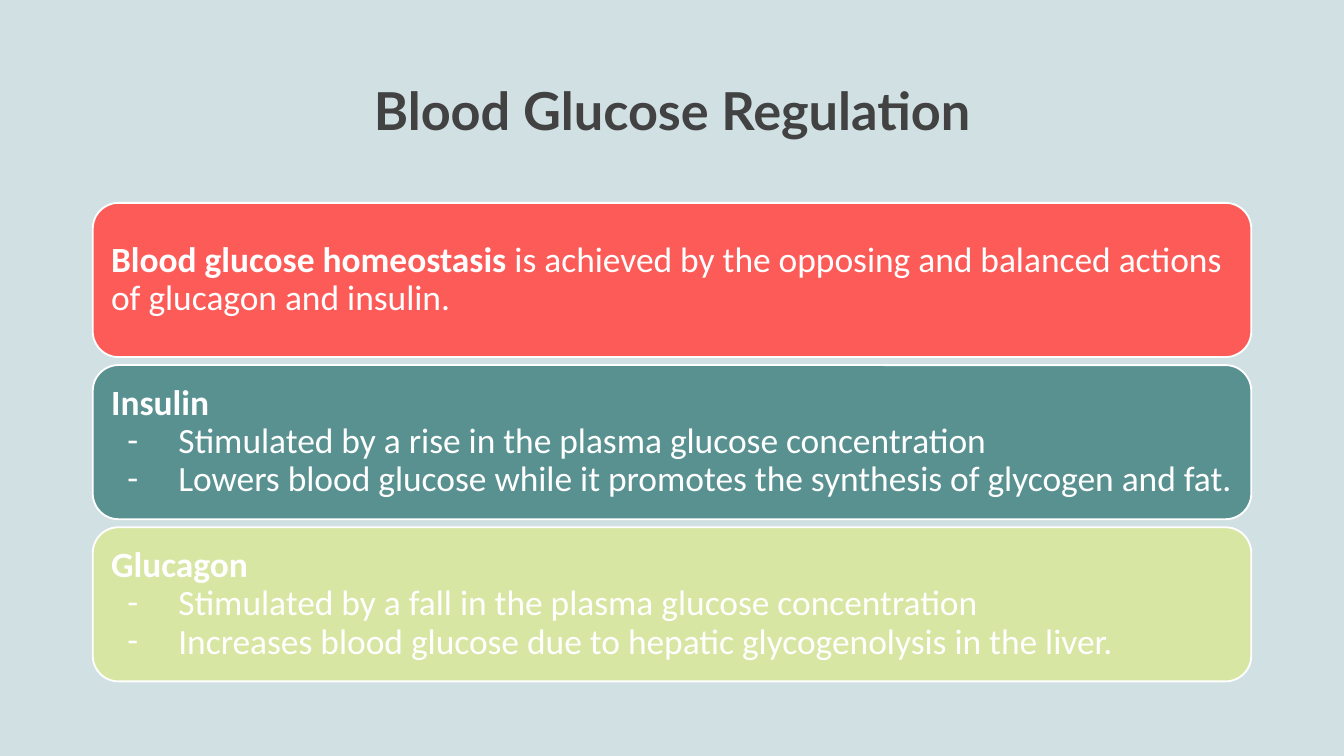
from pptx import Presentation
from pptx.dml.color import RGBColor
from pptx.enum.shapes import MSO_SHAPE as Shape
from pptx.enum.text import MSO_ANCHOR as Anchor, PP_ALIGN as Align
from pptx.oxml.ns import qn
from pptx.util import Inches, Pt
from lxml.etree import SubElement

WHITE = "FFFFFF"
CARDS = [
    ("FD5B58", "Blood glucose homeostasis ",
     "is achieved by the opposing and balanced actions of glucagon and insulin.", []),
    ("599191", "Insulin", "",
     ["Stimulated by a rise in the plasma glucose concentration",
      "Lowers blood glucose while it promotes the synthesis of glycogen and fat. "]),
    ("D7E6A3", "Glucagon", "",
     ["Stimulated by a fall in the plasma glucose concentration",
      "Increases blood glucose due to hepatic glycogenolysis in the liver. "]),
]


def color(code):
    """Turn a hex string into a colour."""
    return RGBColor.from_string(code)


def add_text(slide, x, y, w, h, side, top):
    """Place a wrapping, vertically centred text box and return its frame."""
    box = slide.shapes.add_textbox(Inches(x), Inches(y), Inches(w), Inches(h))
    frame = box.text_frame
    frame.word_wrap = True
    frame.vertical_anchor = Anchor.MIDDLE
    frame.margin_left = frame.margin_right = Inches(side)
    frame.margin_top = frame.margin_bottom = Inches(top)
    return frame


def set_para(para, name, size, code, align=Align.LEFT):
    """Set the font, spacing and alignment of a paragraph."""
    font = para.font
    font.name, font.size = name, Pt(size)
    font.color.rgb = color(code)
    para.line_spacing = 0.9
    para.alignment = align


def add_dash(para):
    """Give a paragraph a hanging dash bullet."""
    props = para._p.get_or_add_pPr()
    props.set("marL", str(Inches(0.5)))
    props.set("indent", str(Inches(-0.38)))
    for tag, key, value in (("a:buFont", "typeface", "Calibri"),
                            ("a:buChar", "char", "-")):
        part = SubElement(props, qn(tag))
        part.set(key, value)
        props.insert_element_before(part, "a:tabLst", "a:defRPr", "a:extLst")


def add_title(slide, x, y, w, h):
    """Place the slide title in its box."""
    para = add_text(slide, x, y, w, h, 0.07, 0.04).paragraphs[0]
    para.text = "Blood Glucose Regulation"
    set_para(para, "Lato", 28, "424242", Align.CENTER)
    para.font.bold = True


def add_card(slide, x, y, w, h, fill, head, rest, items):
    """Place one rounded card with a bold lead and dashed items."""
    card = slide.shapes.add_shape(
        Shape.ROUNDED_RECTANGLE, Inches(x), Inches(y), Inches(w), Inches(h))
    card.shadow.inherit = False
    card.fill.solid()
    card.fill.fore_color.rgb = color(fill)
    card.line.color.rgb = color(WHITE)
    card.line.width = Pt(1)
    pad = 0.05 * h
    frame = add_text(slide, x + pad, y + pad, w - 2 * pad, h - 2 * pad, 0.08, 0.08)
    para = frame.paragraphs[0]
    set_para(para, "Calibri", 19, WHITE)
    lead = para.add_run()
    lead.text, lead.font.bold = head, True
    if rest:
        para.add_run().text = rest
    for item in items:
        para = frame.add_paragraph()
        para.text = item
        set_para(para, "Calibri", 19, WHITE)
        add_dash(para)


def add_cards(slide, x, y, w, h, gap):
    """Stack the cards evenly down the given box."""
    tall = (h - gap * (len(CARDS) - 1)) / len(CARDS)
    for i, card in enumerate(CARDS):
        add_card(slide, x, y + i * (tall + gap), w, tall, *card)


def main():
    """Build and save the slide."""
    deck = Presentation()
    deck.slide_width = Inches(10)
    deck.slide_height = deck.slide_width * 9 // 16
    slide = deck.slides.add_slide(deck.slide_layouts[6])
    back = slide.background.fill
    back.solid()
    back.fore_color.rgb = color("D0E0E3")
    add_title(slide, 0.69, 0.3, 8.62, 1.09)
    add_cards(slide, 0.69, 1.51, 8.62, 3.56, 0.06)
    deck.save("out.pptx")


if __name__ == "__main__":
    main()
